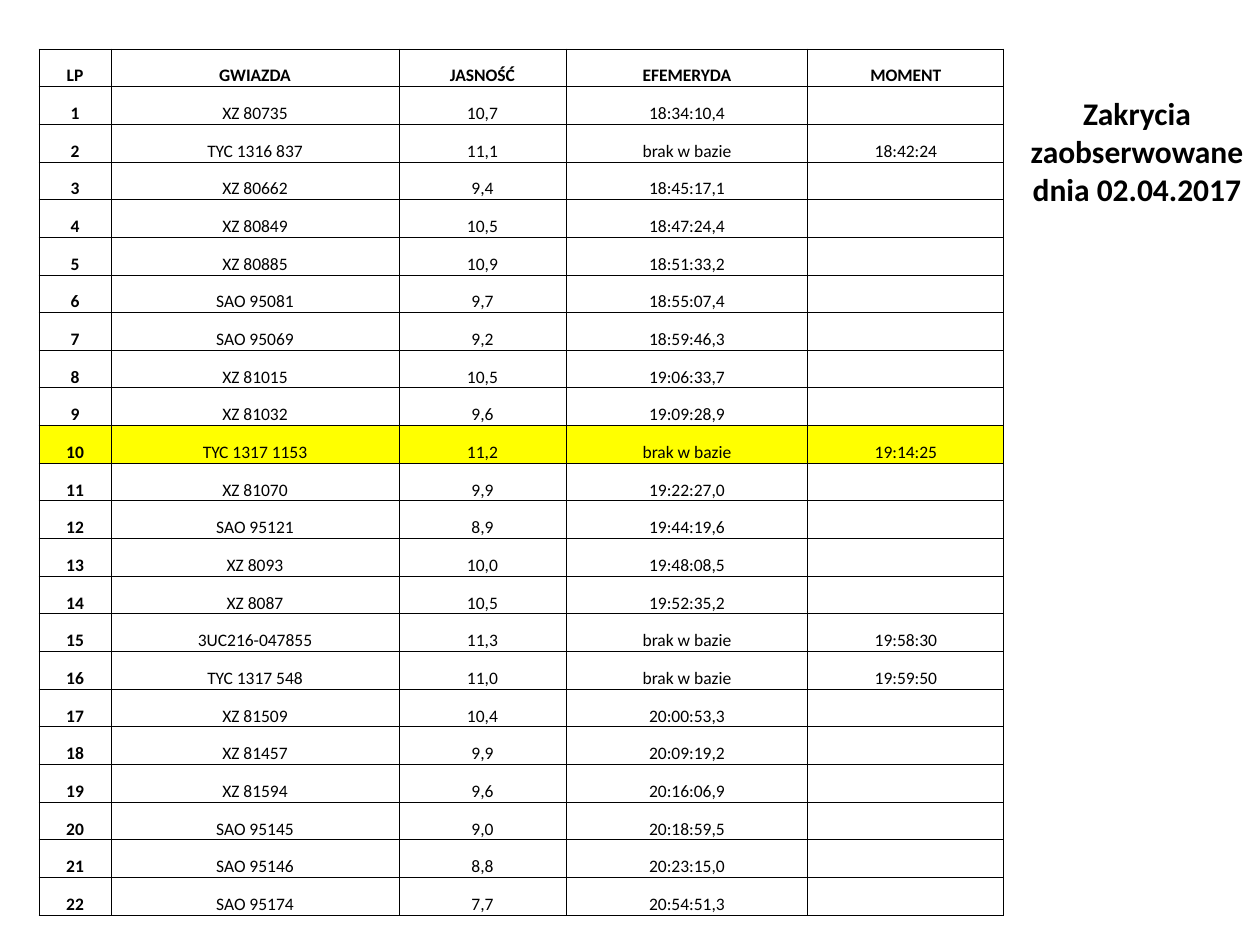
from dataclasses import dataclass
from lxml.etree import SubElement
from pptx import Presentation
from pptx.dml.color import RGBColor as Color
from pptx.enum.text import MSO_ANCHOR as Anchor, PP_ALIGN as Align
from pptx.oxml.ns import qn
from pptx.util import Emu, Pt


@dataclass(frozen=True)
class Theme:
    font: str = "Calibri"
    ink: str = "000000"
    paper: str = "FFFFFF"
    highlight: str = "FFFF00"
    cell_size: int = 10
    title_size: int = 18
    border: float = 0.5


theme = Theme()
SCALE = 914400 / 126


def px(count):
    return Emu(round(count * SCALE))


def write(frame, text, size=theme.cell_size, bold=False, color=theme.ink):
    para = frame.paragraphs[0]
    para.alignment = Align.CENTER
    span = para.add_run()
    span.text = text
    span.font.name = theme.font
    span.font.size = Pt(size)
    span.font.bold = bold
    span.font.color.rgb = Color.from_string(color)


HEADER = ("LP", "GWIAZDA", "JASNOŚĆ", "EFEMERYDA", "MOMENT")
MISSING = "brak w bazie"
OCCULTATIONS = [
    ("XZ 80735", "10,7", "18:34:10,4", ""),
    ("TYC 1316 837", "11,1", MISSING, "18:42:24"),
    ("XZ 80662", "9,4", "18:45:17,1", ""),
    ("XZ 80849", "10,5", "18:47:24,4", ""),
    ("XZ 80885", "10,9", "18:51:33,2", ""),
    ("SAO 95081", "9,7", "18:55:07,4", ""),
    ("SAO 95069", "9,2", "18:59:46,3", ""),
    ("XZ 81015", "10,5", "19:06:33,7", ""),
    ("XZ 81032", "9,6", "19:09:28,9", ""),
    ("TYC 1317 1153", "11,2", MISSING, "19:14:25"),
    ("XZ 81070", "9,9", "19:22:27,0", ""),
    ("SAO 95121", "8,9", "19:44:19,6", ""),
    ("XZ 8093", "10,0", "19:48:08,5", ""),
    ("XZ 8087", "10,5", "19:52:35,2", ""),
    ("3UC216-047855", "11,3", MISSING, "19:58:30"),
    ("TYC 1317 548", "11,0", MISSING, "19:59:50"),
    ("XZ 81509", "10,4", "20:00:53,3", ""),
    ("XZ 81457", "9,9", "20:09:19,2", ""),
    ("XZ 81594", "9,6", "20:16:06,9", ""),
    ("SAO 95145", "9,0", "20:18:59,5", ""),
    ("SAO 95146", "8,8", "20:23:15,0", ""),
    ("SAO 95174", "7,7", "20:54:51,3", ""),
]
HIGHLIGHTED_ROW = 10
COLUMN_WIDTHS = (72, 288, 167, 242, 196)
TABLE_HEIGHT = 867

deck = Presentation()
deck.slide_width, deck.slide_height = px(1260), px(945)
page = deck.slides.add_slide(deck.slide_layouts[6])

rows = [HEADER] + [(str(number), *star) for number, star in enumerate(OCCULTATIONS, 1)]
table = page.shapes.add_table(
    len(rows), len(HEADER), px(39), px(49), px(sum(COLUMN_WIDTHS)), px(TABLE_HEIGHT)
).table
table.first_row = False
table.horz_banding = False
for column, width in zip(table.columns, COLUMN_WIDTHS):
    column.width = px(width)

for row_index, values in enumerate(rows):
    table.rows[row_index].height = px(TABLE_HEIGHT / len(rows))
    fill = theme.highlight if row_index == HIGHLIGHTED_ROW else theme.paper
    for column_index, value in enumerate(values):
        cell = table.cell(row_index, column_index)
        cell.vertical_anchor = Anchor.BOTTOM
        cell.margin_left = cell.margin_right = cell.margin_top = px(1)
        cell.margin_bottom = 0
        write(cell.text_frame, value, bold=row_index == 0 or column_index == 0)
        properties = cell._tc.get_or_add_tcPr()
        for side in ("a:lnL", "a:lnR", "a:lnT", "a:lnB"):
            line = SubElement(properties, qn(side), w=str(Pt(theme.border)))
            solid = SubElement(line, qn("a:solidFill"))
            SubElement(solid, qn("a:srgbClr"), val=theme.ink)
        cell.fill.solid()
        cell.fill.fore_color.rgb = Color.from_string(fill)

title = page.shapes.add_textbox(px(1014), px(88), px(246), px(127))
title.text_frame.word_wrap = True
write(
    title.text_frame,
    "Zakrycia zaobserwowane dnia 02.04.2017",
    size=theme.title_size,
    bold=True,
)

deck.save("out.pptx")
